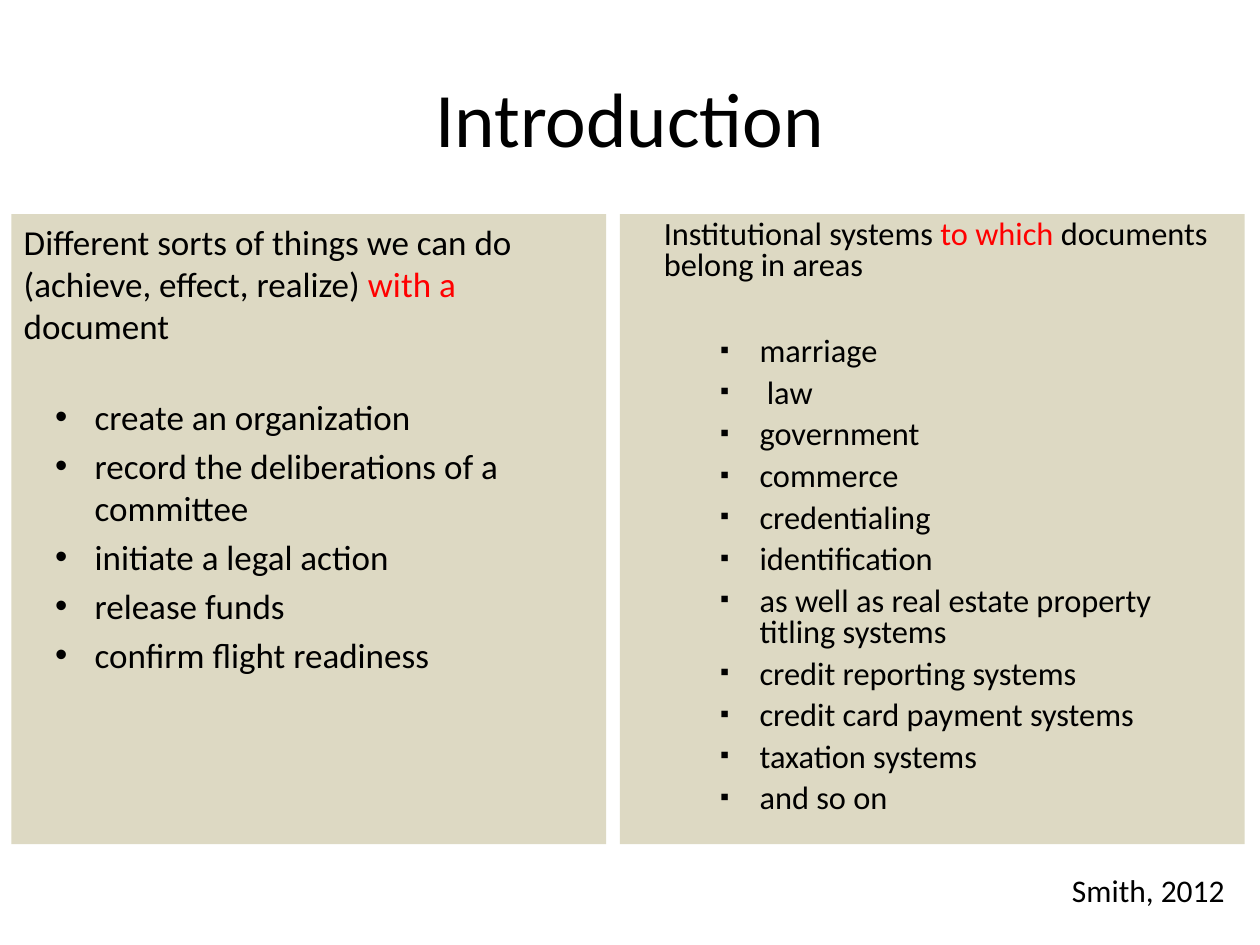
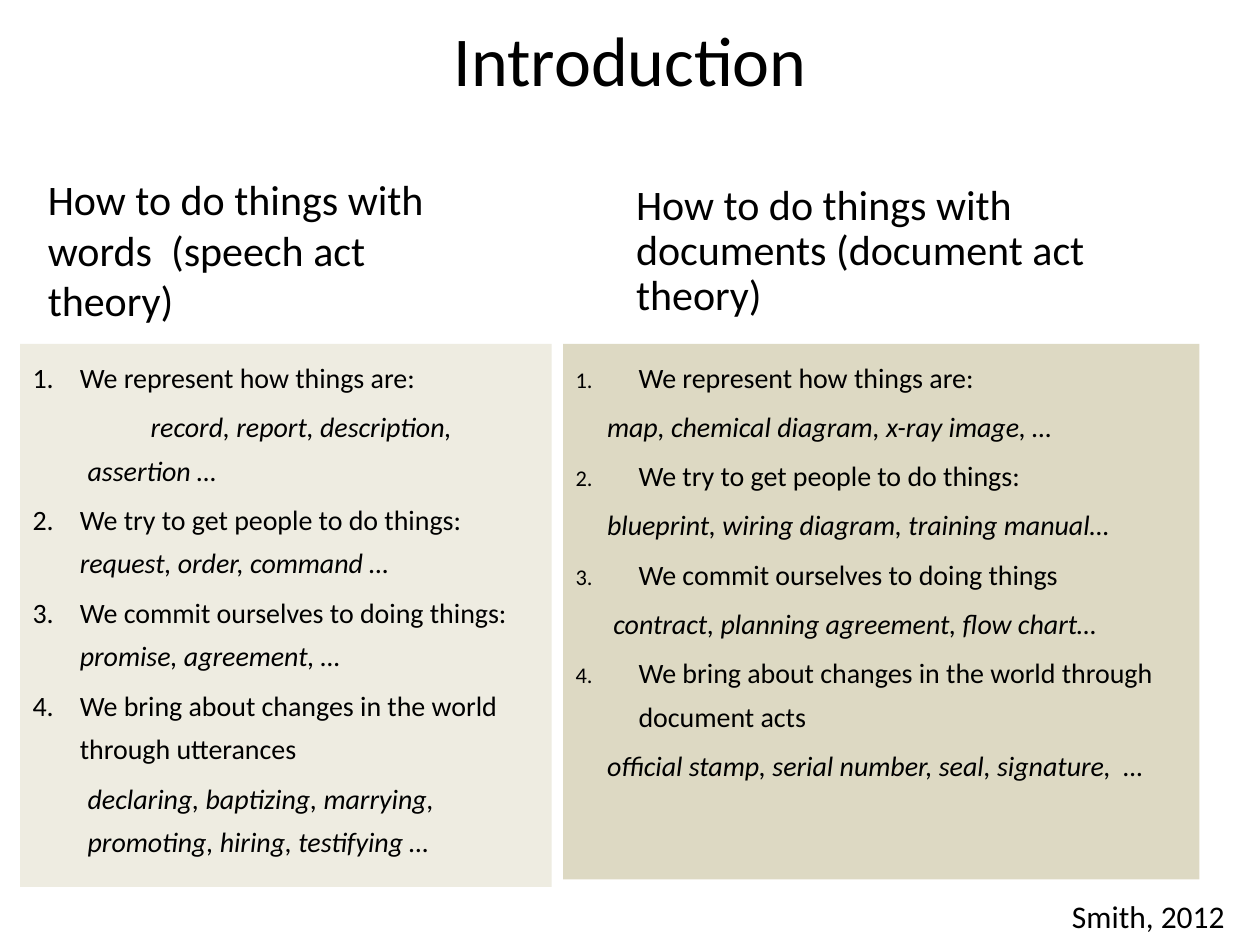
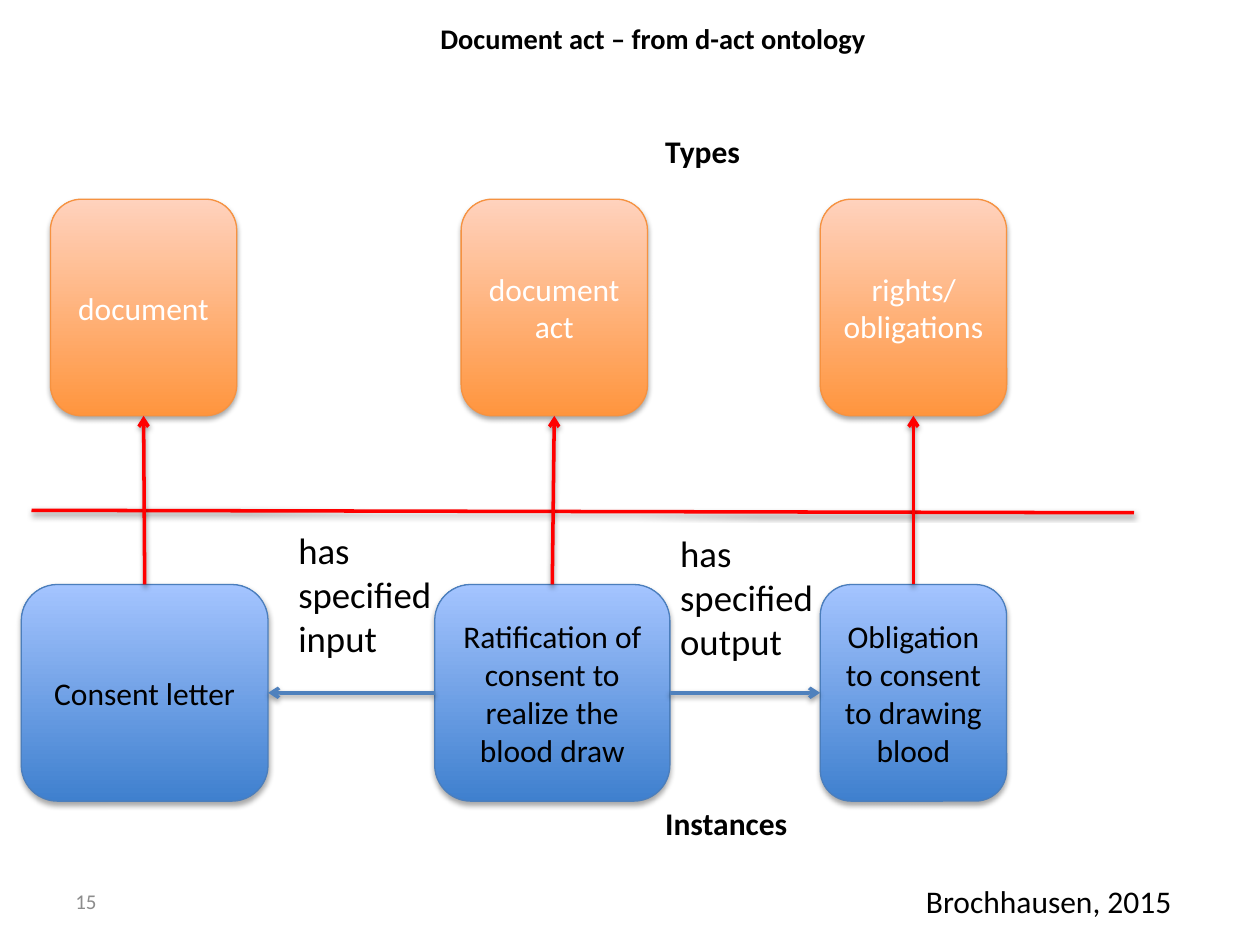
from dataclasses import dataclass
from typing import NamedTuple, Optional

from lxml import etree
from pptx import Presentation
from pptx import util as u
from pptx.dml import color as c
from pptx.enum import shapes, text
from pptx.oxml import ns

FONT = "Calibri"
INK = {
    "black": "000000", "white": "FFFFFF", "red": "FF0000", "gray": "8C8C8C",
    "tan": "DDD9C3", "cream": "EEECE1", "blue": "4F81BD",
}
# Gradient from bottom to top, then the outline
BLEND = {
    "type": ("FF953E", "FFD2BD", "F69240"),
    "case": ("3F80CE", "A4C4FF", "4B7EBC"),
}
TOP, LEFT, BOTTOM, RIGHT = range(4)
MID = text.MSO_ANCHOR.MIDDLE
CENTER = text.PP_ALIGN.CENTER


class Box(NamedTuple):
    x: float
    y: float
    w: float
    h: float


class Run(NamedTuple):
    words: str
    tint: str = "black"
    slant: bool = False
    fresh: bool = False  # starts on a new line


@dataclass
class Para:
    runs: list[Run]
    level: int = 0
    left: float = 0
    first: float = 0
    before: float = 0
    after: float = 0
    lead: float = 1
    mark: str = ""  # a bullet sign, or the number of a list item
    scale: int = 100


@dataclass
class Style:
    size: float = 18
    bold: bool = False
    align: text.PP_ALIGN = text.PP_ALIGN.LEFT
    anchor: text.MSO_ANCHOR = text.MSO_ANCHOR.TOP
    wrap: bool = True


def rgb(code: str) -> c.RGBColor:
    return c.RGBColor.from_string(code)


def add_mark(para, mark: str, scale: int) -> None:
    props = para._p.get_or_add_pPr()
    if not mark:
        etree.SubElement(props, ns.qn("a:buNone"))
        return
    etree.SubElement(props, ns.qn("a:buSzPct"), val=str(scale * 1000))
    if mark.isdigit():
        etree.SubElement(props, ns.qn("a:buAutoNum"), type="arabicPeriod", startAt=mark)
    else:
        etree.SubElement(props, ns.qn("a:buFont"), typeface="Arial")
        etree.SubElement(props, ns.qn("a:buChar"), char=mark)


def write(shape, paras: list[Para], style: Style) -> None:
    frame = shape.text_frame
    frame.word_wrap = style.wrap
    frame.vertical_anchor = style.anchor
    for i, item in enumerate(paras):
        para = frame.add_paragraph() if i else frame.paragraphs[0]
        para.alignment = style.align
        para.level = item.level
        para.line_spacing = item.lead
        para.space_before = u.Pt(item.before)
        para.space_after = u.Pt(item.after)
        props = para._p.get_or_add_pPr()
        props.set("marL", str(u.Pt(item.left)))
        props.set("indent", str(u.Pt(item.first)))
        add_mark(para, item.mark, item.scale)
        for part in item.runs:
            if part.fresh:
                para.add_line_break()
            run = para.add_run()
            run.text = part.words
            font = run.font
            font.name, font.size = FONT, u.Pt(style.size)
            font.bold, font.italic = style.bold, part.slant
            font.color.rgb = rgb(INK[part.tint])


def add_text(slide, box: Box, words: str, style: Style, tint: str = "black") -> None:
    shape = slide.shapes.add_textbox(*map(u.Pt, box))
    write(shape, [Para([Run(words, tint)])], style)


def add_panel(slide, box: Box, tint: str, paras: list[Para], size: float) -> None:
    shape = slide.shapes.add_shape(shapes.MSO_SHAPE.RECTANGLE, *map(u.Pt, box))
    shape.shadow.inherit = False
    shape.fill.solid()
    shape.fill.fore_color.rgb = rgb(INK[tint])
    shape.line.fill.background()
    write(shape, paras, Style(size))


def cast(effect, drop: float, alpha: int) -> None:
    """Put a soft shadow below into an effect list."""
    shade = etree.SubElement(
        effect, ns.qn("a:outerShdw"), blurRad=str(u.Pt(3.1)), dist=str(u.Pt(drop)),
        dir="5400000", rotWithShape="0")
    hue = etree.SubElement(shade, ns.qn("a:srgbClr"), val=INK["black"])
    etree.SubElement(hue, ns.qn("a:alpha"), val=str(alpha * 1000))


def add_node(slide, box: Box, kind: str, words: str, tint: str):
    shape = slide.shapes.add_shape(shapes.MSO_SHAPE.ROUNDED_RECTANGLE, *map(u.Pt, box))
    shape.shadow.inherit = False
    *stops, edge = BLEND[kind]
    shape.fill.gradient()
    shape.fill.gradient_angle = 90
    for stop, code in zip(shape.fill.gradient_stops, stops):
        stop.color.rgb = rgb(code)
    shape.line.color.rgb = rgb(edge)
    shape.line.width = u.Pt(0.75)
    cast(shape.element.spPr.find(ns.qn("a:effectLst")), 1.8, 35)
    write(shape, [Para([Run(words, tint)])], Style(align=CENTER, anchor=MID))
    return shape


def add_line(slide, ends: tuple, tint: str, arrow: bool = False):
    line = slide.shapes.add_connector(shapes.MSO_CONNECTOR.STRAIGHT, *map(u.Pt, ends))
    line.line.color.rgb = rgb(INK[tint])
    line.line.width = u.Pt(2)
    props = line.element.spPr
    if arrow:
        etree.SubElement(props.find(ns.qn("a:ln")), ns.qn("a:tailEnd"), type="arrow")
    cast(etree.SubElement(props, ns.qn("a:effectLst")), 1.6, 38)
    return line


def link(slide, start, side: int, goal, face: int, tint: str) -> None:
    """Join two nodes with an arrow."""
    line = add_line(slide, (0, 0, 0, 0), tint, True)
    line.begin_connect(start, side)
    line.end_connect(goal, face)


def add_credit(slide, y: float) -> None:
    add_text(slide, Box(605.5, y, 103, 28.8), "Smith, 2012", Style(wrap=False))


def draw_uses(slide) -> None:
    add_text(slide, Box(36, 21.6, 648, 90), "Introduction",
             Style(44, align=CENTER, anchor=MID))
    deeds = [
        "create an organization", "record the deliberations of a committee",
        "initiate a legal action", "release funds", "confirm flight readiness",
    ]
    intro = Para([
        Run("Different sorts of things we can do (achieve, effect, realize)"),
        Run(" with a ", "red"), Run("document")], before=4, after=24)
    add_panel(slide, Box(6.5, 122.4, 340, 360), "tan", [intro] + [
        Para([Run(deed)], 1, 40.5, -22.5, 4, mark="•") for deed in deeds], 20)

    areas = [
        "marriage", " law", "government", "commerce", "credentialing",
        "identification", "as well as real estate property titling systems",
        "credit reporting systems", "credit card payment systems",
        "taxation systems", "and so on",
    ]
    intro = Para([
        Run("Institutional systems "), Run("to which ", "red"),
        Run("documents belong in areas")], 1, 18, before=6, after=25.5, lead=0.8)
    add_panel(slide, Box(354.25, 122.4, 357, 360), "tan", [intro] + [
        Para([Run(area)], 3, 72.75, -22.5, 6, lead=0.8, mark="▪", scale=80)
        for area in areas], 18.5)
    add_credit(slide, 494)


def draw_acts(slide) -> None:
    add_text(slide, Box(12.25, 5.75, 696, 90), "Introduction", Style(40, align=CENTER))

    def point(rank: int, words: str, hang: float, scale: int = 100,
              more: Optional[str] = None) -> Para:
        runs = [Run(words)]
        if more:
            runs.append(Run(more, slant=True, fresh=True))
        return Para(runs, 0, hang, -hang, 3.2, lead=1.3, mark=str(rank), scale=scale)

    def sample(words: str, left: float, first: float = 0) -> Para:
        return Para([Run(words, slant=True)], 1, left, first, 3.2, lead=1.3)

    add_panel(slide, Box(11.5, 196.5, 303.8, 310.3), "cream", [
        point(1, "We represent how things are:", 27),
        sample("record, report, description, assertion …", 31.5, 36),
        point(2, "We try to get people to do things:", 27,
              more="request, order, command …"),
        point(3, "We commit ourselves to doing things:", 27,
              more="promise, agreement, …"),
        point(4, "We bring about changes in the world through utterances", 27),
        sample("declaring, baptizing, marrying, promoting, hiring, testifying …", 31.5),
    ], 16)
    add_text(slide, Box(20.2, 95.8, 272.2, 94.3),
             "How to do things with words  (speech act theory)", Style(24))

    pairs = [
        ("We represent how things are:", "map, chemical diagram, x-ray image, …"),
        ("We try to get people to do things:",
         "blueprint, wiring diagram, training manual…"),
        ("We commit ourselves to doing things",
         " contract, planning agreement, flow chart…"),
        ("We bring about changes in the world through document acts",
         "official stamp, serial number, seal, signature,  …"),
    ]
    paras = []
    for rank, (words, cases) in enumerate(pairs, 1):
        paras += [point(rank, words, 36, 80), sample(cases, 18)]
    add_panel(slide, Box(321.8, 196.5, 363.6, 306), "tan", paras, 16)
    shape = slide.shapes.add_textbox(*map(u.Pt, Box(356.4, 101.5, 314.6, 81.4)))
    write(shape, [Para([Run("How to do things with documents (document act theory)")],
                       lead=0.9)], Style(24))
    add_credit(slide, 509)


def draw_graph(slide) -> None:
    add_line(slide, (18, 291.6, 648, 293), "red")
    for words, y, w in (("Types", 72, 58.3), ("Instances", 455.8, 85.7)):
        add_text(slide, Box(373, y, w, 28.8), words, Style(bold=True, wrap=False))

    types = [
        add_node(slide, Box(x, 113.8, 106.5, 123.8), "type", words, "white")
        for x, words in ((28.8, "document"), (263.5, "document act"),
                         (468.7, "rights/obligations"))]
    cases = [
        add_node(slide, Box(x, 334, w, 123.8), "case", words, "black")
        for x, w, words in (
            (12.2, 141, "Consent letter"),
            (248.4, 134.4, "Ratification of consent to realize the blood draw"),
            (468.7, 106.5, "Obligation to consent to drawing blood"))]
    letter, act, duty = cases
    link(slide, act, LEFT, letter, RIGHT, "blue")
    link(slide, act, RIGHT, duty, LEFT, "blue")
    for x, y, words in ((163.4, 298, "has specified input"),
                        (381.6, 299.5, "has specified output")):
        add_text(slide, Box(x, y, 91, 83.5), words, Style(21))
    for case, kind in zip(cases, types):
        link(slide, case, TOP, kind, BOTTOM, "red")

    add_text(slide, Box(36, 500.4, 167.8, 28.8), "15", Style(12, anchor=MID), "gray")
    add_text(slide, Box(239.8, 3.6, 266.4, 36.7), "Document act – from d-act ontology",
             Style(16.2, True, CENTER, MID))
    add_text(slide, Box(522, 500.4, 174.2, 28.8), "Brochhausen, 2015", Style())


def main() -> None:
    deck = Presentation()
    deck.slide_width, deck.slide_height = u.Pt(720), u.Pt(540)
    for draw in (draw_uses, draw_acts, draw_graph):
        draw(deck.slides.add_slide(deck.slide_layouts[6]))
    deck.save("out.pptx")


if __name__ == "__main__":
    main()
